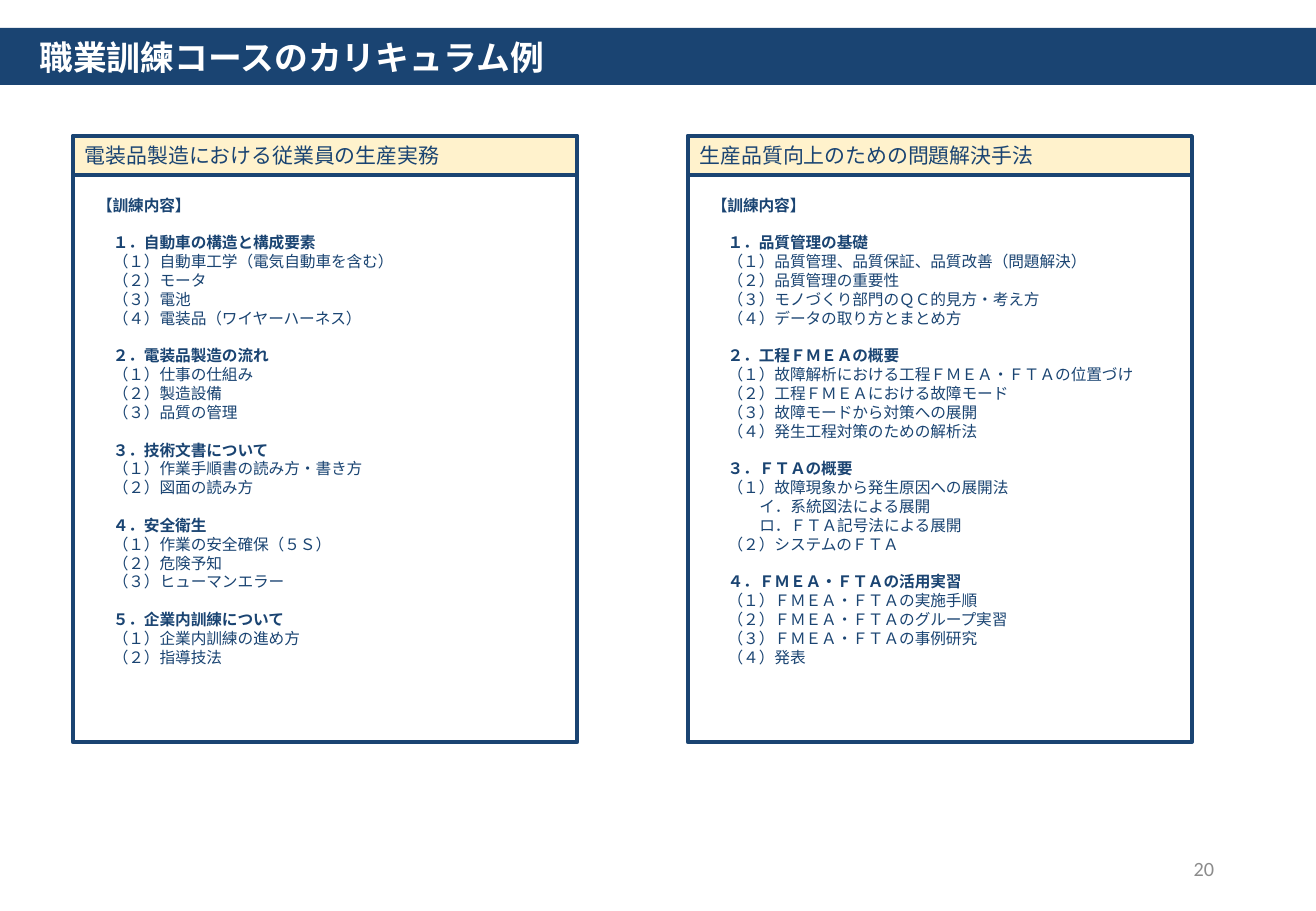
from pptx import Presentation
from pptx.dml.color import RGBColor
from pptx.enum.shapes import MSO_SHAPE
from pptx.enum.text import MSO_ANCHOR, PP_ALIGN
from pptx.util import Inches, Pt

RECT = MSO_SHAPE.RECTANGLE
TOP, MIDDLE = MSO_ANCHOR.TOP, MSO_ANCHOR.MIDDLE
LEFT, CENTER, RIGHT = PP_ALIGN.LEFT, PP_ALIGN.CENTER, PP_ALIGN.RIGHT

COLORS = {"navy": "1A4472", "cream": "FFF2CC", "white": "FFFFFF", "gray": "8C8C8C"}
JP_FONT, NUMBER_FONT = "Noto Sans CJK JP", "Calibri"
BODY_SIZE, LINE_PITCH = 9.3, 11.16
ITEM_INDENT, SUBITEM_INDENT = 0.13, 0.39
PANEL_TOP, PANEL_W, PANEL_H, HEADING_H = 1.12, 4.15, 4.99, 0.32

# Each course: left edge, name, sections of (heading, items)
COURSES = [
    (0.6, "電装品製造における従業員の生産実務", [
        ("１．自動車の構造と構成要素", [
            "（１）自動車工学（電気自動車を含む）", "（２）モータ", "（３）電池",
            "（４）電装品（ワイヤーハーネス）"]),
        ("２．電装品製造の流れ", [
            "（１）仕事の仕組み", "（２）製造設備", "（３）品質の管理"]),
        ("３．技術文書について", [
            "（１）作業手順書の読み方・書き方", "（２）図面の読み方"]),
        ("４．安全衛生", [
            "（１）作業の安全確保（５Ｓ）", "（２）危険予知", "（３）ヒューマンエラー"]),
        ("５．企業内訓練について", [
            "（１）企業内訓練の進め方", "（２）指導技法"]),
    ]),
    (5.66, "生産品質向上のための問題解決手法", [
        ("１．品質管理の基礎", [
            "（１）品質管理、品質保証、品質改善（問題解決）", "（２）品質管理の重要性",
            "（３）モノづくり部門のＱＣ的見方・考え方", "（４）データの取り方とまとめ方"]),
        ("２．工程ＦＭＥＡの概要", [
            "（１）故障解析における工程ＦＭＥＡ・ＦＴＡの位置づけ",
            "（２）工程ＦＭＥＡにおける故障モード", "（３）故障モードから対策への展開",
            "（４）発生工程対策のための解析法"]),
        ("３．ＦＴＡの概要", [
            "（１）故障現象から発生原因への展開法", "イ．系統図法による展開",
            "ロ．ＦＴＡ記号法による展開", "（２）システムのＦＴＡ"]),
        ("４．ＦＭＥＡ・ＦＴＡの活用実習", [
            "（１）ＦＭＥＡ・ＦＴＡの実施手順", "（２）ＦＭＥＡ・ＦＴＡのグループ実習",
            "（３）ＦＭＥＡ・ＦＴＡの事例研究", "（４）発表"]),
    ]),
]


def write(p, text, size=BODY_SIZE, color="navy", bold=False, font=JP_FONT,
          align=LEFT, indent=0, before=0, pitch=None):
    p.alignment = align
    p.space_before = Pt(before)
    if pitch:
        p.line_spacing = Pt(pitch)
    if indent:
        p._p.get_or_add_pPr().set("marL", str(Inches(indent)))
    r = p.add_run()
    r.text = text
    r.font.size = Pt(size)
    r.font.bold = bold
    r.font.name = font
    r.font.color.rgb = RGBColor.from_string(COLORS[color])
    # East Asian typeface follows the Latin one
    latin = r._r.rPr.find("{*}latin")
    ea = latin.makeelement(latin.tag.replace("latin", "ea"), {"typeface": font})
    latin.addnext(ea)


def add_rect(s, x, y, w, h, fill=None, line=None):
    sp = s.shapes.add_shape(RECT, Inches(x), Inches(y), Inches(w), Inches(h))
    sp.shadow.inherit = False
    if fill:
        sp.fill.solid()
        sp.fill.fore_color.rgb = RGBColor.from_string(COLORS[fill])
    else:
        sp.fill.background()
    if line:
        sp.line.color.rgb = RGBColor.from_string(COLORS[line])
        sp.line.width = Pt(2.25)
    else:
        sp.line.fill.background()
    return sp


def add_text_box(s, x, y, w, h, anchor=MIDDLE):
    tf = s.shapes.add_textbox(Inches(x), Inches(y), Inches(w), Inches(h)).text_frame
    tf.word_wrap = True
    tf.vertical_anchor = anchor
    return tf


def add_course(s, x, name, sections):
    # Frame
    add_rect(s, x, PANEL_TOP, PANEL_W, PANEL_H, line="navy")

    # Training contents
    tf = add_text_box(s, x + 0.1, 1.56, 4.22, 4.1, anchor=TOP)
    write(tf.paragraphs[0], "【訓練内容】", bold=True, pitch=LINE_PITCH)
    for heading, items in sections:
        write(tf.add_paragraph(), heading, bold=True, indent=ITEM_INDENT,
              before=LINE_PITCH, pitch=LINE_PITCH)
        for item in items:
            indent = ITEM_INDENT if item.startswith("（") else SUBITEM_INDENT
            write(tf.add_paragraph(), item, indent=indent, pitch=LINE_PITCH)

    # Course name
    tf = add_rect(s, x, PANEL_TOP, PANEL_W, HEADING_H, "cream", "navy").text_frame
    tf.margin_top = tf.margin_bottom = 0
    tf.vertical_anchor = MIDDLE
    write(tf.paragraphs[0], name, size=12.4)


def main():
    prs = Presentation()
    prs.slide_width, prs.slide_height = Inches(10.83), Inches(7.5)
    s = prs.slides.add_slide(prs.slide_layouts[6])

    # Title band
    add_rect(s, 0, 0.23, 10.83, 0.47, fill="navy")
    tf = add_text_box(s, 0.04, 0.25, 4.72, 0.44)
    write(tf.paragraphs[0], "職業訓練コースのカリキュラム例", size=20,
          color="white", bold=True, align=CENTER)

    # Course panels
    for x, name, sections in COURSES:
        add_course(s, x, name, sections)

    # Page number
    tf = add_text_box(s, 7.65, 6.95, 2.44, 0.4)
    write(tf.paragraphs[0], "20", size=12, color="gray", font=NUMBER_FONT, align=RIGHT)

    prs.save("out.pptx")


if __name__ == "__main__":
    main()
